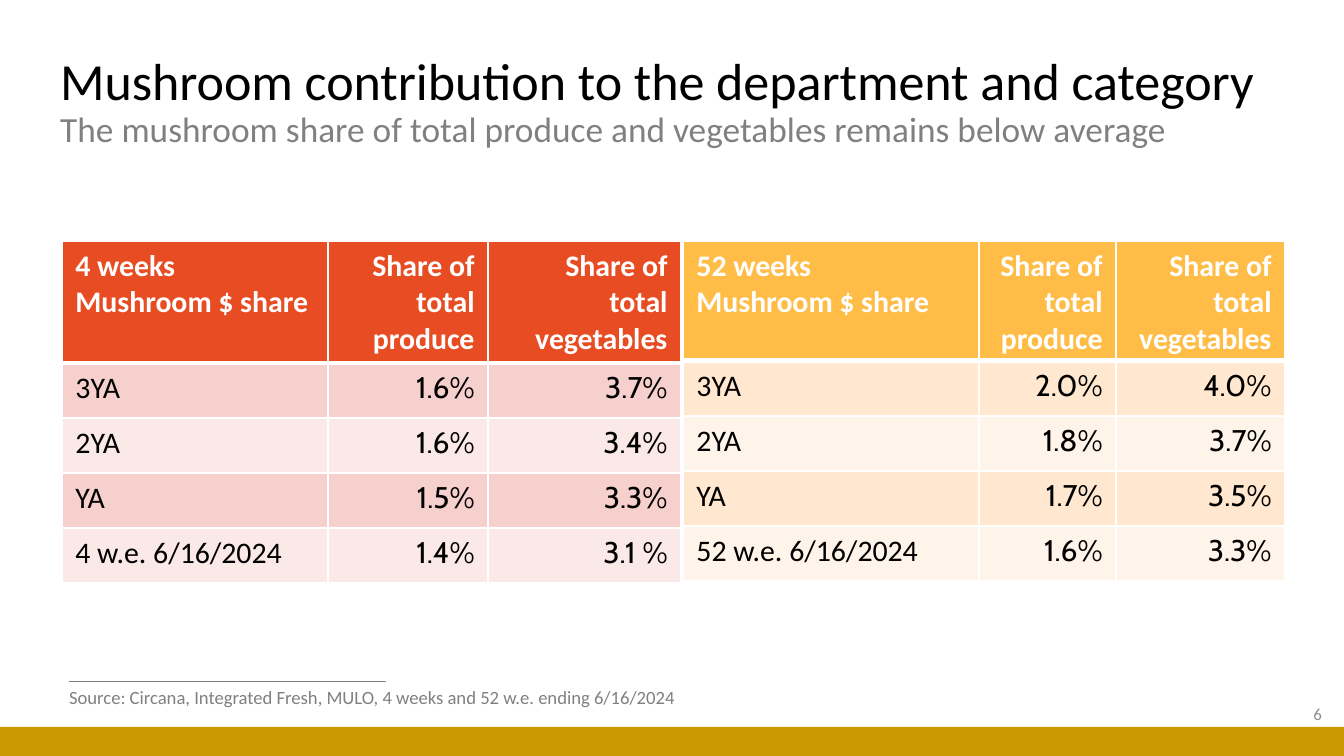
from lxml import etree
from pptx import Presentation
from pptx.dml.color import RGBColor
from pptx.enum.shapes import MSO_CONNECTOR, MSO_SHAPE
from pptx.enum.text import MSO_ANCHOR, PP_ALIGN
from pptx.oxml.ns import qn
from pptx.util import Emu, Pt

LEFT, RIGHT = PP_ALIGN.LEFT, PP_ALIGN.RIGHT
TOP, MIDDLE = MSO_ANCHOR.TOP, MSO_ANCHOR.MIDDLE
STRAIGHT, RECTANGLE = MSO_CONNECTOR.STRAIGHT, MSO_SHAPE.RECTANGLE
EMU_PER_PX = 914400 / 134.4

THEME = {
    "text_font": "Calibri", "number_font": "Cabin",
    "black": "000000", "white": "FFFFFF", "gray": "808080",
    "page_gray": "8C8C8C", "gold": "CC9900",
    "title": 27.9, "subtitle": 18.9, "table": 16, "source": 10, "page": 9,
    "rule": 0.5, "border": 1, "header_border": 3,
}


def px(*lengths):
    return [Emu(round(length * EMU_PER_PX)) for length in lengths]


def add_lines(paragraph, lines, align=LEFT, bold=False):
    paragraph.alignment = align
    for position, (text, size, color, font) in enumerate(lines):
        if position:
            paragraph.add_line_break()
        run = paragraph.add_run()
        run.text = text
        run.font.size = Pt(THEME[size])
        run.font.name = THEME[font]
        run.font.bold = bold
        run.font.color.rgb = RGBColor.from_string(THEME[color])


prs = Presentation()
prs.slide_width, prs.slide_height = px(1344, 756)
slide = prs.slides.add_slide(prs.slide_layouts[6])

source_rule = slide.shapes.add_connector(STRAIGHT, *px(69, 682, 386, 682))
source_rule.line.color.rgb = RGBColor.from_string(THEME["gray"])
source_rule.line.width = Pt(THEME["rule"])
etree.SubElement(source_rule._element.spPr, qn("a:effectLst"))

footer_band = slide.shapes.add_shape(RECTANGLE, *px(0, 727, 1344, 29))
footer_band.shadow.inherit = False
footer_band.fill.solid()
footer_band.fill.fore_color.rgb = RGBColor.from_string(THEME["gold"])
footer_band.line.fill.background()

texts = [
    ((47, 69, 1288, 67), MIDDLE, LEFT, True, 0.9, [
        ("Mushroom contribution to the department and category", "title", "black", "text_font"),
        ("The mushroom share of total produce and vegetables remains below average",
         "subtitle", "gray", "text_font")]),
    ((1032, 694, 303, 40), MIDDLE, RIGHT, True, 1.0, [("6", "page", "page_gray", "text_font")]),
    ((56, 679, 656, 36), TOP, LEFT, False, 1.0, [
        ("Source: Circana, Integrated Fresh, MULO, 4 weeks and 52 w.e. ending 6/16/2024",
         "source", "gray", "text_font")]),
]
for place, anchor, align, wrap, spacing, lines in texts:
    frame = slide.shapes.add_textbox(*px(*place)).text_frame
    frame.word_wrap = wrap
    frame.vertical_anchor = anchor
    frame.paragraphs[0].line_spacing = spacing
    add_lines(frame.paragraphs[0], lines, align)

share_tables = [
    {"left": 62, "columns": (266, 160, 193), "header_height": 122,
     "fills": ("E84C22", "F6D0CD", "FBE9E8"), "period": "4 weeks",
     "shares": [("3YA", "1.6%", "3.7%"), ("2YA", "1.6%", "3.4%"),
                ("YA", "1.5%", "3.3%"), ("4 w.e. 6/16/2024", "1.4%", "3.1 %")]},
    {"left": 683, "columns": (296, 137, 169), "header_height": 120,
     "fills": ("FFBD47", "FFE8CF", "FFF4E9"), "period": "52 weeks",
     "shares": [("3YA", "2.0%", "4.0%"), ("2YA", "1.8%", "3.7%"),
                ("YA", "1.7%", "3.5%"), ("52 w.e. 6/16/2024", "1.6%", "3.3%")]},
]
for share in share_tables:
    header = (share["period"] + "\nMushroom $ share",
              "Share of total produce", "Share of total vegetables")
    rows = [header] + share["shares"]
    heights = [share["header_height"]] + [55] * len(share["shares"])
    table = slide.shapes.add_table(
        len(rows), len(header),
        *px(share["left"], 241, sum(share["columns"]), sum(heights))).table
    for column, width in zip(table.columns, px(*share["columns"])):
        column.width = width
    for row, height in zip(table.rows, px(*heights)):
        row.height = height

    for r, values in enumerate(rows):
        fill = share["fills"][0 if r == 0 else 2 - r % 2]
        for c, value in enumerate(values):
            cell = table.cell(r, c)
            is_header = r == 0
            color = "white" if is_header else "black"
            font = "number_font" if r and c else "text_font"
            add_lines(cell.text_frame.paragraphs[0],
                      [(line, "table", color, font) for line in value.split("\n")],
                      RIGHT if c else LEFT, is_header)
            if is_header:
                cell.margin_bottom = px(4)[0]
            properties = cell._tc.get_or_add_tcPr()
            for side in ("lnL", "lnR", "lnT", "lnB"):
                under_header = (r, side) in ((0, "lnB"), (1, "lnT"))
                weight = THEME["header_border" if under_header else "border"]
                border = etree.SubElement(properties, qn("a:" + side), w=str(Pt(weight)))
                paint = etree.SubElement(border, qn("a:solidFill"))
                etree.SubElement(paint, qn("a:srgbClr"), val=THEME["white"])
            cell.fill.solid()
            cell.fill.fore_color.rgb = RGBColor.from_string(fill)

prs.save("out.pptx")
